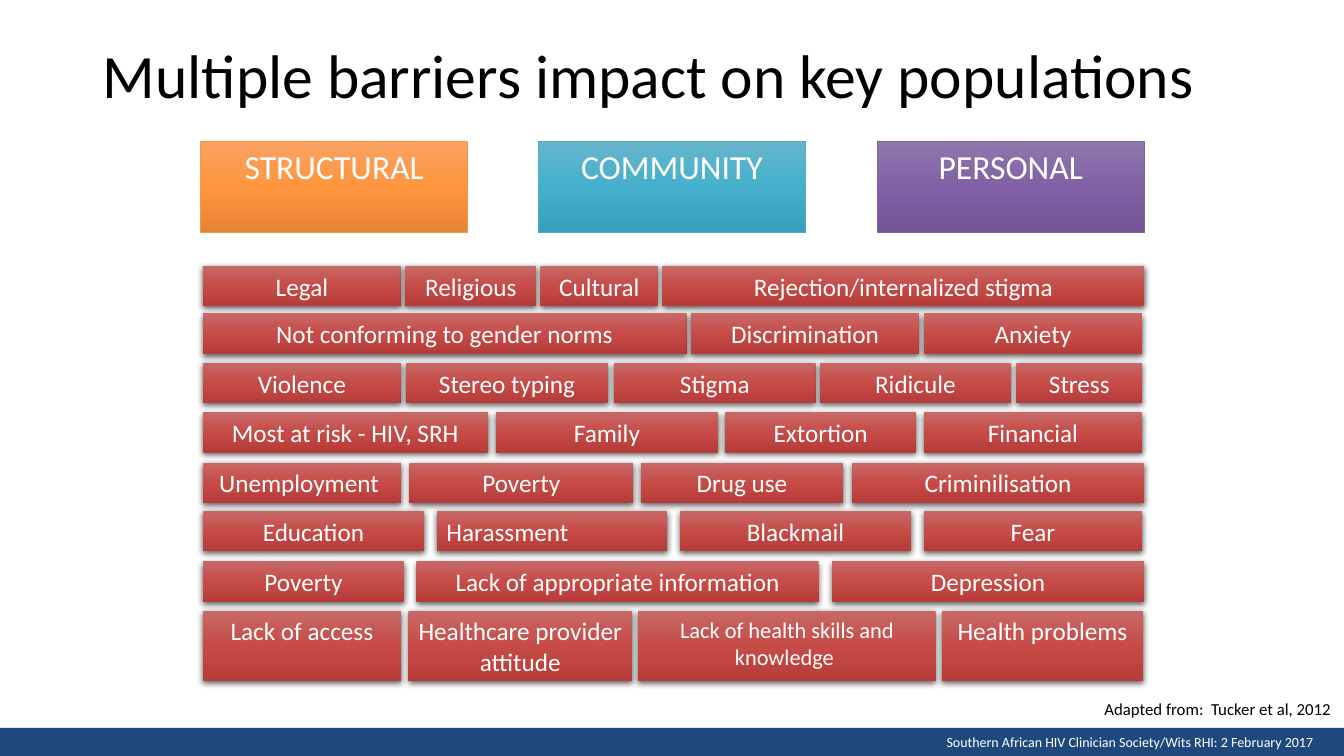
"""Build a slide that stacks the barriers facing key populations like a brick wall."""
from copy import deepcopy

from pptx import Presentation
from pptx.dml.color import RGBColor
from pptx.enum.shapes import MSO_SHAPE
from pptx.enum.text import MSO_ANCHOR, PP_ALIGN
from pptx.oxml import parse_xml
from pptx.oxml.ns import nsdecls, qn
from pptx.util import Pt

PX = 9144
COLORS = {
    "white": "FFFFFF",
    "black": "000000",
    "footer": "1F497D",
    "structural": ["FAA263", "FF953E", "E58435"],
    "structural line": "F79646",
    "community": ["66B5CD", "45B0CC", "36A0BC"],
    "community line": "4BACC6",
    "personal": ["8E78AC", "8061A5", "715396"],
    "personal line": "8064A2",
    "brick": ["C76967", "C64B47", "B63C39"],
}
BRICK_SHADOW = (
    f'<a:outerShdw {nsdecls("a")} blurRad="57150" dist="19050" dir="5400000" rotWithShape="0">'
    f'<a:srgbClr val="{COLORS["black"]}"><a:alpha val="63000"/></a:srgbClr></a:outerShdw>'
)

deck = Presentation()
deck.slide_width = 1333 * PX
deck.slide_height = 750 * PX
page = deck.slides.add_slide(deck.slide_layouts[6])


def write(box, text, size, color="white", align=PP_ALIGN.CENTER, wrap=True):
    frame = box.text_frame
    frame.word_wrap = wrap
    frame.vertical_anchor = MSO_ANCHOR.TOP
    frame.text = text
    para = frame.paragraphs[0]
    para.alignment = align
    span = para.runs[0]
    span.font.name = "Calibri"
    span.font.size = Pt(size)
    span.font.color.rgb = RGBColor.from_string(COLORS[color])
    return para


def add_block(left, top, width, height, shades):
    box = page.shapes.add_shape(
        MSO_SHAPE.RECTANGLE, left * PX, top * PX, width * PX, height * PX)
    box.shadow.inherit = False
    box.line.fill.background()
    box.fill.gradient()
    box.fill.gradient_angle = 270
    stop_list = box._element.spPr.find(qn("a:gradFill")).find(qn("a:gsLst"))
    stop_list.insert(1, deepcopy(stop_list[0]))
    for index, (stop, shade) in enumerate(zip(box.fill.gradient_stops, shades)):
        stop.position = index / 2
        stop.color.rgb = RGBColor.from_string(shade)
    return box


footer = page.shapes.add_shape(MSO_SHAPE.RECTANGLE, 0, 722 * PX, 1333 * PX, 28 * PX)
footer.shadow.inherit = False
footer.fill.solid()
footer.fill.fore_color.rgb = RGBColor.from_string(COLORS["footer"])
footer.line.fill.background()

footer_text = page.shapes.add_textbox(929 * PX, 723 * PX, 386 * PX, 27 * PX)
write(footer_text, "Southern African HIV Clinician Society/Wits RHI: 2 February 2017",
      10, align=PP_ALIGN.LEFT, wrap=False)

for left, level in [(199, "structural"), (534, "community"), (870, "personal")]:
    banner = add_block(left, 140, 265, 91, COLORS[level])
    banner.line.color.rgb = RGBColor.from_string(COLORS[f"{level} line"])
    banner.line.width = Pt(0.5)
    write(banner, level.upper(), 24)

brick_rows = [
    (264, 40, [("Legal", 201, 197), ("Religious", 402, 130), ("Cultural", 536, 117),
               ("Rejection/internalized stigma", 657, 478)]),
    (311, 40, [("Not conforming to gender norms", 201, 480), ("Discrimination", 685, 227),
               ("Anxiety", 916, 217)]),
    (360, 40, [("Violence", 201, 197), ("Stereo typing", 403, 200), ("Stigma", 609, 200),
               ("Ridicule", 813, 190), ("Stress", 1008, 125)]),
    (409, 40, [("Most at risk - HIV, SRH", 201, 283), ("Family", 492, 220),
               ("Extortion", 719, 190), ("Financial", 916, 217)]),
    (459, 40, [("Unemployment ", 201, 197), ("Poverty", 406, 222), ("Drug use", 636, 200),
               ("Criminilisation", 845, 290)]),
    (507, 40, [("Education", 201, 220), ("Harassment", 433, 229), ("Blackmail", 674, 230),
               ("Fear", 916, 217)]),
    (557, 40, [("Poverty", 201, 200), ("Lack of appropriate information", 413, 399),
               ("Depression", 825, 310)]),
    (606, 70, [("Lack of access", 201, 197), ("Healthcare provider attitude", 405, 222),
               ("Lack of health skills and knowledge ", 633, 295),
               ("Health problems", 934, 200)]),
]
for top, height, bricks in brick_rows:
    for barrier, left, width in bricks:
        brick = add_block(left, top, width, height, COLORS["brick"])
        brick._element.spPr.find(qn("a:effectLst")).append(parse_xml(BRICK_SHADOW))
        size = 16 if barrier.startswith("Lack of health") else 18
        align = PP_ALIGN.LEFT if barrier == "Harassment" else PP_ALIGN.CENTER
        write(brick, barrier, size, align=align)

credit = page.shapes.add_textbox(1049 * PX, 688 * PX, 281 * PX, 30 * PX)
write(credit, "Adapted from:  Tucker et al, 2012", 12, "black", PP_ALIGN.RIGHT)

title = page.shapes.add_textbox(92 * PX, 40 * PX, 1150 * PX, 145 * PX)
heading = write(title, "Multiple barriers impact on key populations", 44, "black", PP_ALIGN.LEFT)
heading.line_spacing = 0.9

deck.save("out.pptx")
